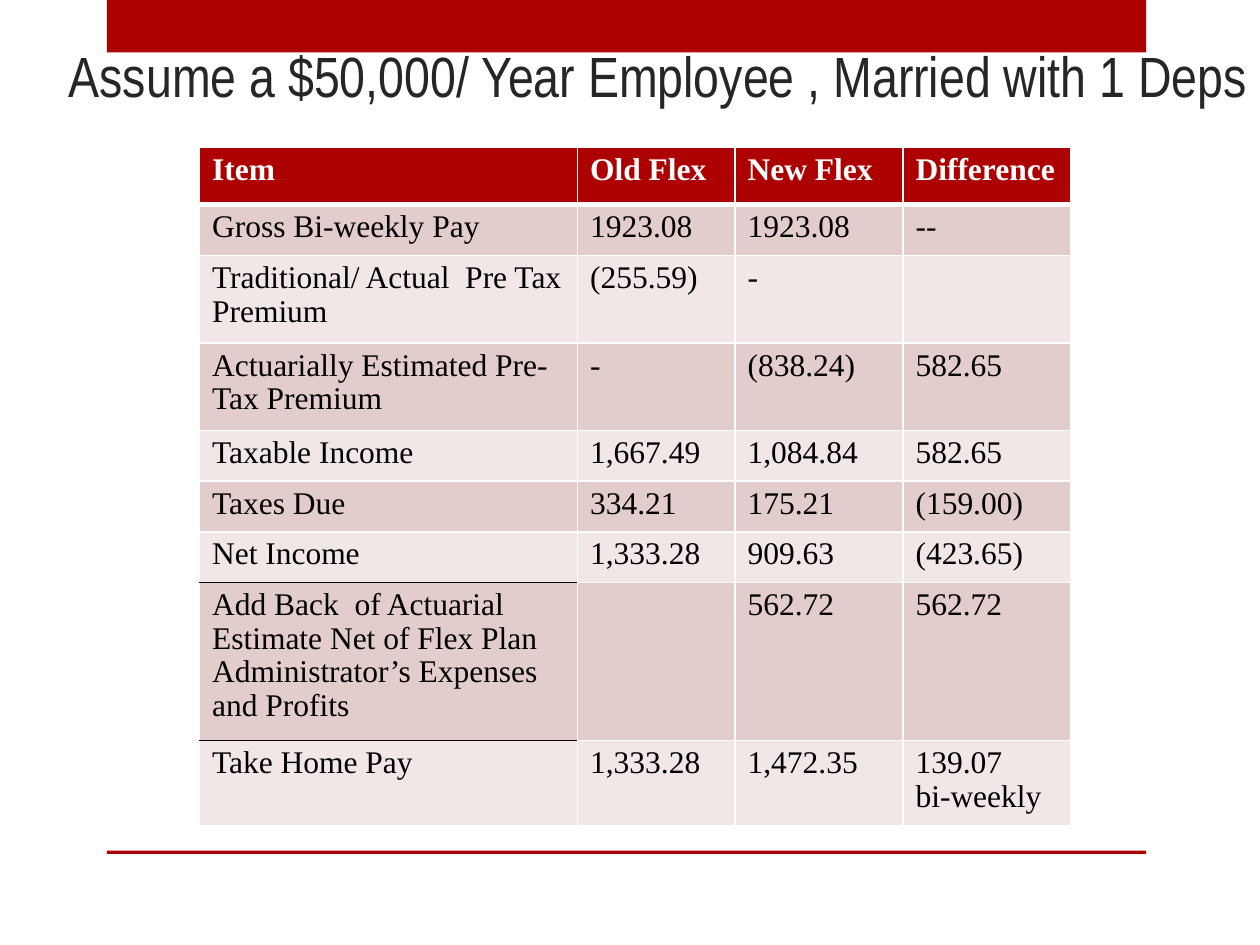
from dataclasses import dataclass

from lxml.etree import SubElement
from pptx import Presentation
from pptx.dml.color import RGBColor as RGB
from pptx.enum.shapes import MSO_SHAPE as Shape
from pptx.enum.text import MSO_ANCHOR as Anchor, PP_ALIGN as Align
from pptx.oxml.ns import qn
from pptx.util import Pt


@dataclass(frozen=True)
class Theme:
    accent: str = "AD0101"
    heading: str = "262626"
    ink: str = "000000"
    paper: str = "FFFFFF"
    bands: tuple = ("E3CCCC", "F1E7E7")
    title_font: str = "Arial Narrow"
    table_font: str = "Times New Roman"
    title_size: float = 32.4
    table_size: float = 18
    line_spacing: float = 0.96


HEADINGS = ["Item", "Old Flex", "New Flex", "Difference"]
PAY_ROWS = [
    ["Gross Bi-weekly Pay", "1923.08", "1923.08", "--"],
    ["Traditional/ Actual  Pre Tax Premium", "(255.59)", "-", ""],
    ["Actuarially Estimated Pre-Tax Premium", "-", "(838.24)", "582.65"],
    ["Taxable Income", "1,667.49", "1,084.84", "582.65"],
    ["Taxes Due", "334.21", "175.21", "(159.00)"],
    ["Net Income", "1,333.28", "909.63", "(423.65)"],
    ["Add Back  of Actuarial Estimate Net of Flex Plan "
     "Administrator’s Expenses and Profits", "", "562.72", "562.72"],
    ["Take Home Pay", "1,333.28", "1,472.35", "139.07\nbi-weekly"],
]
COLUMN_WIDTHS = [216, 90, 96, 96]
ROW_HEIGHTS = [33, 29, 50, 50, 29, 29, 29, 86.5, 29]
ADD_BACK_ROW = 7


class SlideBuilder:
    def __init__(self, slide, theme):
        self.slide = slide
        self.theme = theme

    def add_run(self, paragraph, text, font, size, color, bold=False):
        run = paragraph.add_run()
        run.text = text
        run.font.name = font
        run.font.size = Pt(size)
        run.font.bold = bold
        run.font.color.rgb = RGB.from_string(color)

    def bar(self, left, top, width, height):
        bar = self.slide.shapes.add_shape(
            Shape.RECTANGLE, Pt(left), Pt(top), Pt(width), Pt(height))
        bar.shadow.inherit = False
        bar.fill.solid()
        bar.fill.fore_color.rgb = RGB.from_string(self.theme.accent)
        bar.line.fill.background()

    def title(self, text, left, top, width, height, right_inset):
        box = self.slide.shapes.add_textbox(
            Pt(left), Pt(top), Pt(width), Pt(height))
        frame = box.text_frame
        frame.word_wrap = True
        frame.vertical_anchor = Anchor.BOTTOM
        frame.margin_right = Pt(right_inset)
        paragraph = frame.paragraphs[0]
        paragraph.alignment = Align.CENTER
        self.add_run(paragraph, text, self.theme.title_font,
                     self.theme.title_size, self.theme.heading)

    def border(self, cell, side, color, width):
        """Draw one cell edge; side is L, R, T or B."""
        properties = cell._tc.get_or_add_tcPr()
        edge = SubElement(properties, qn(f"a:ln{side}"), w=str(Pt(width)))
        fill = SubElement(edge, qn("a:solidFill"))
        SubElement(fill, qn("a:srgbClr"), val=color)

    def cell(self, cell, text, fill, color, bold, edges):
        # The schema wants the borders ahead of the fill.
        for side, (edge_color, width) in edges.items():
            self.border(cell, side, edge_color, width)
        cell.fill.solid()
        cell.fill.fore_color.rgb = RGB.from_string(fill)
        frame = cell.text_frame
        for index, line in enumerate(text.split("\n")):
            paragraph = frame.add_paragraph() if index else frame.paragraphs[0]
            paragraph.line_spacing = self.theme.line_spacing
            if line:
                self.add_run(paragraph, line, self.theme.table_font,
                             self.theme.table_size, color, bold)
            else:
                paragraph.font.size = Pt(self.theme.table_size)

    def cell_edges(self, row, column):
        """White grid, thick under the header, black around the add-back item."""
        theme = self.theme
        edges = {side: (theme.paper, 1) for side in "LRTB"}
        header_rule, black_rule = (theme.paper, 3), (theme.ink, 1)
        for side, rule in (("T", row), ("B", row + 1)):
            if rule == 1:
                edges[side] = header_rule
            elif column == 0 and rule in (ADD_BACK_ROW, ADD_BACK_ROW + 1):
                edges[side] = black_rule
        return edges

    def table(self, rows, left, top, widths, heights):
        theme = self.theme
        table = self.slide.shapes.add_table(
            len(rows), len(widths), Pt(left), Pt(top),
            Pt(sum(widths)), Pt(sum(heights))).table
        for column, width in zip(table.columns, widths):
            column.width = Pt(width)
        for r, (texts, height) in enumerate(zip(rows, heights)):
            table.rows[r].height = Pt(height)
            is_header = r == 0
            fill = theme.accent if is_header else theme.bands[(r - 1) % 2]
            color = theme.paper if is_header else theme.ink
            for c, text in enumerate(texts):
                self.cell(table.cell(r, c), text, fill, color, is_header,
                          self.cell_edges(r, c))


def main():
    deck = Presentation()
    deck.slide_width, deck.slide_height = Pt(720), Pt(540)
    builder = SlideBuilder(deck.slides.add_slide(deck.slide_layouts[6]), Theme())
    builder.bar(61, 0, 594, 30)
    builder.bar(61, 486, 594, 2)
    builder.title("Assume a $50,000/ Year Employee , Married with 1 Deps",
                  -18, 18, 804, 48, right_inset=23)
    builder.table([HEADINGS] + PAY_ROWS, 114, 84, COLUMN_WIDTHS, ROW_HEIGHTS)
    deck.save("out.pptx")


if __name__ == "__main__":
    main()
